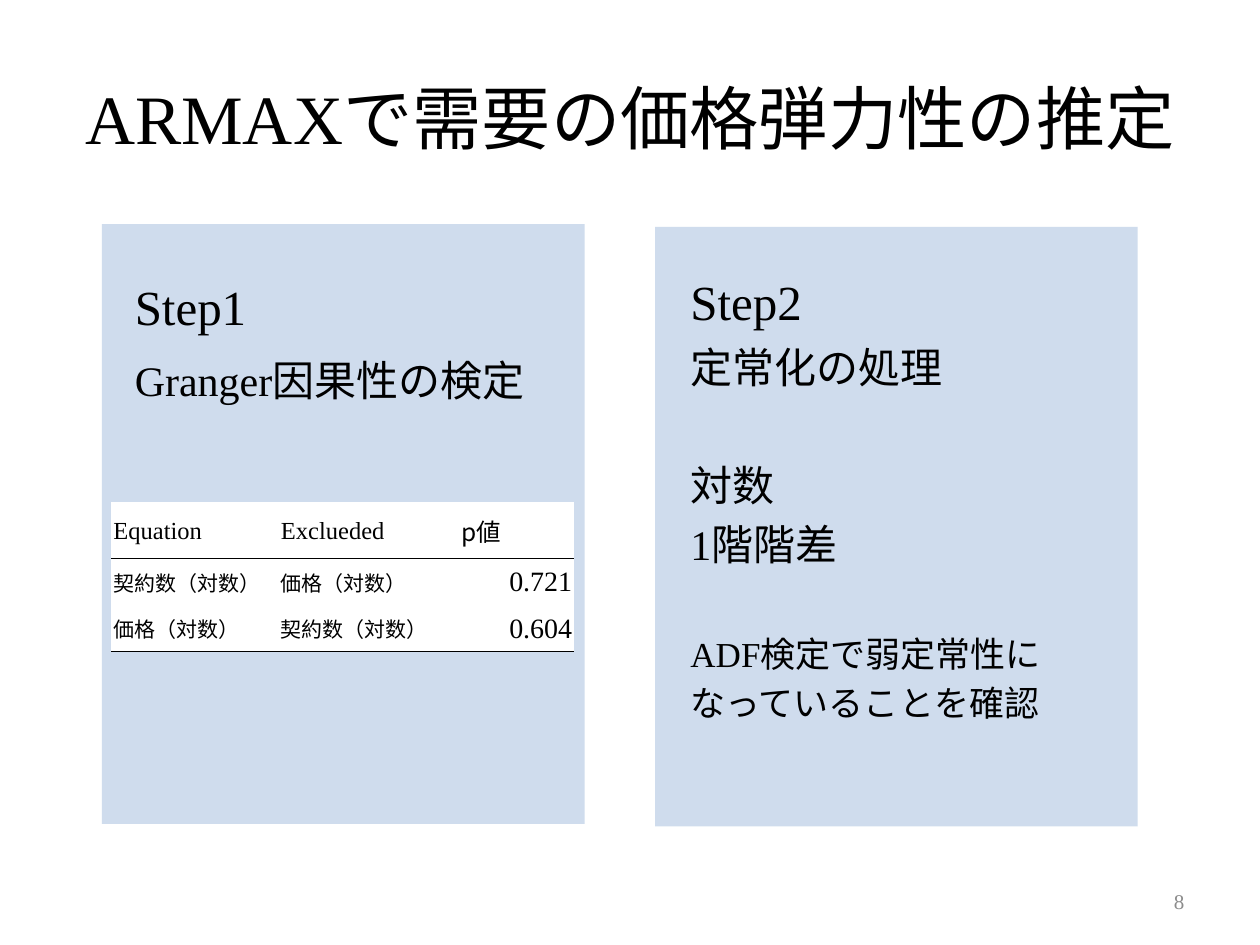
from lxml import etree
from pptx import Presentation, util as u
from pptx.dml.color import RGBColor
from pptx.enum import shapes, text
from pptx.oxml.ns import qn

BLACK = RGBColor(0x00, 0x00, 0x00)
WHITE = RGBColor(0xFF, 0xFF, 0xFF)
BLUE = RGBColor(0x4F, 0x81, 0xBD)
GRAY = RGBColor(0x8C, 0x8C, 0x8C)
LATIN, CJK = "Times New Roman", "Noto Sans CJK JP"
LEFT, CENTER, RIGHT = (text.PP_ALIGN.LEFT, text.PP_ALIGN.CENTER,
                       text.PP_ALIGN.RIGHT)


class Deck:
    """Style and current slide; lengths are cells of a 100 x 75 grid."""

    def __init__(self):
        self.prs = Presentation()
        self.prs.slide_width, self.prs.slide_height = u.Inches(10), u.Inches(7.5)
        self.cell = self.prs.slide_width / 100
        self.s = self.prs.slides.add_slide(self.prs.slide_layouts[6])

    def grid(self, *lengths):
        return [round(n * self.cell) for n in lengths]

    def fill_text(self, p, words, size, color=BLACK, align=LEFT, font=LATIN):
        r = p.add_run()
        r.text = words
        p.alignment = align
        p.font.size = u.Pt(size)
        r.font.name, r.font.size = font, u.Pt(size)
        r.font.color.rgb = color
        etree.SubElement(r._r.get_or_add_rPr(), qn("a:ea"), typeface=CJK)

    def box(self, *at, anchor=text.MSO_ANCHOR.MIDDLE):
        tf = self.s.shapes.add_textbox(*self.grid(*at)).text_frame
        tf.word_wrap = True
        tf.vertical_anchor = anchor
        tf.margin_left = tf.margin_right = tf.margin_top = tf.margin_bottom = 0
        return tf

    def label(self, words, size, at, color=BLACK, align=LEFT):
        self.fill_text(self.box(*at).paragraphs[0], words, size, color, align)

    def panel(self, *at):
        sp = self.s.shapes.add_shape(shapes.MSO_SHAPE.RECTANGLE, *self.grid(*at))
        sp.shadow.inherit = False
        sp.line.fill.background()
        sp.fill.solid()
        sp.fill.fore_color.rgb = BLUE
        color = sp._element.spPr.find(".//" + qn("a:srgbClr"))
        etree.SubElement(color, qn("a:alpha"), val="27000")

    def steps(self, lines, at):
        """Each line is (words, size, space before, line height) in points."""
        tf = self.box(*at, anchor=text.MSO_ANCHOR.TOP)
        for i, (words, size, before, height) in enumerate(lines):
            p = tf.add_paragraph() if i else tf.paragraphs[0]
            p.space_before, p.line_spacing = u.Pt(before), u.Pt(height)
            self.fill_text(p, words, size)

    def border(self, cell, side):
        ln = etree.Element(qn("a:" + side), w=str(u.Pt(0.5)))
        fill = etree.SubElement(ln, qn("a:solidFill"))
        etree.SubElement(fill, qn("a:srgbClr"), val=str(BLACK))
        cell._tc.get_or_add_tcPr().insert(0, ln)

    def table(self, rows, left, top, widths, heights):
        at = self.grid(left, top, sum(widths), sum(heights))
        t = self.s.shapes.add_table(len(rows), len(widths), *at).table
        t.first_row = t.horz_banding = False
        for col, width in zip(t.columns, self.grid(*widths)):
            col.width = width
        for row, height in zip(t.rows, self.grid(*heights)):
            row.height = height
        for i, row in enumerate(rows):
            for j, (words, size, font, align) in enumerate(row):
                c = t.cell(i, j)
                c.fill.solid()
                c.fill.fore_color.rgb = WHITE
                c.vertical_anchor = text.MSO_ANCHOR.MIDDLE
                c.margin_left = c.margin_right = c.margin_top = u.Inches(0.01)
                c.margin_bottom = 0
                self.fill_text(c.text_frame.paragraphs[0], words, size,
                               align=align, font=font)
                if i in (0, len(rows) - 1):
                    self.border(c, "lnB")
                if i == 1:
                    self.border(c, "lnT")


def result(equation, excluded, p_value):
    return [(equation, 12, CJK, LEFT), (excluded, 12, CJK, LEFT),
            (p_value, 16, LATIN, RIGHT)]


def main():
    d = Deck()
    d.label("ARMAXで需要の価格弾力性の推定", 39.6, (5, 3, 90, 12.5), align=CENTER)
    d.panel(8.1, 17.8, 38.3, 47.6)
    d.panel(52, 18, 38.3, 47.6)
    d.steps([("Step1", 28, 0, 34),
             ("Granger因果性の検定", 24, 6, 33.7)], (10.7, 21.9, 35, 12))
    d.steps([("Step2", 28, 0, 34),
             ("定常化の処理", 24, 1.5, 33.7),
             ("対数", 24, 33.7, 33.7),
             ("1階階差", 24, 0, 33.7),
             ("ADF検定で弱定常性に", 20, 32.6, 28),
             ("なっていることを確認", 20, 0, 28)], (54.8, 21.5, 34, 38))
    header = [("Equation", 14, LATIN, LEFT), ("Exclueded", 14, LATIN, LEFT),
              ("p値", 14, CJK, LEFT)]
    d.table([header,
             result("契約数（対数）", "価格（対数）", "0.721"),
             result("価格（対数）", "契約数（対数）", "0.604")],
            8.9, 39.9, (13.3, 14.3, 9), (4.4, 3.7, 3.7))
    d.label("8", 12, (71.7, 69.5, 22.3, 4), GRAY, RIGHT)
    d.prs.save("out.pptx")


if __name__ == "__main__":
    main()
